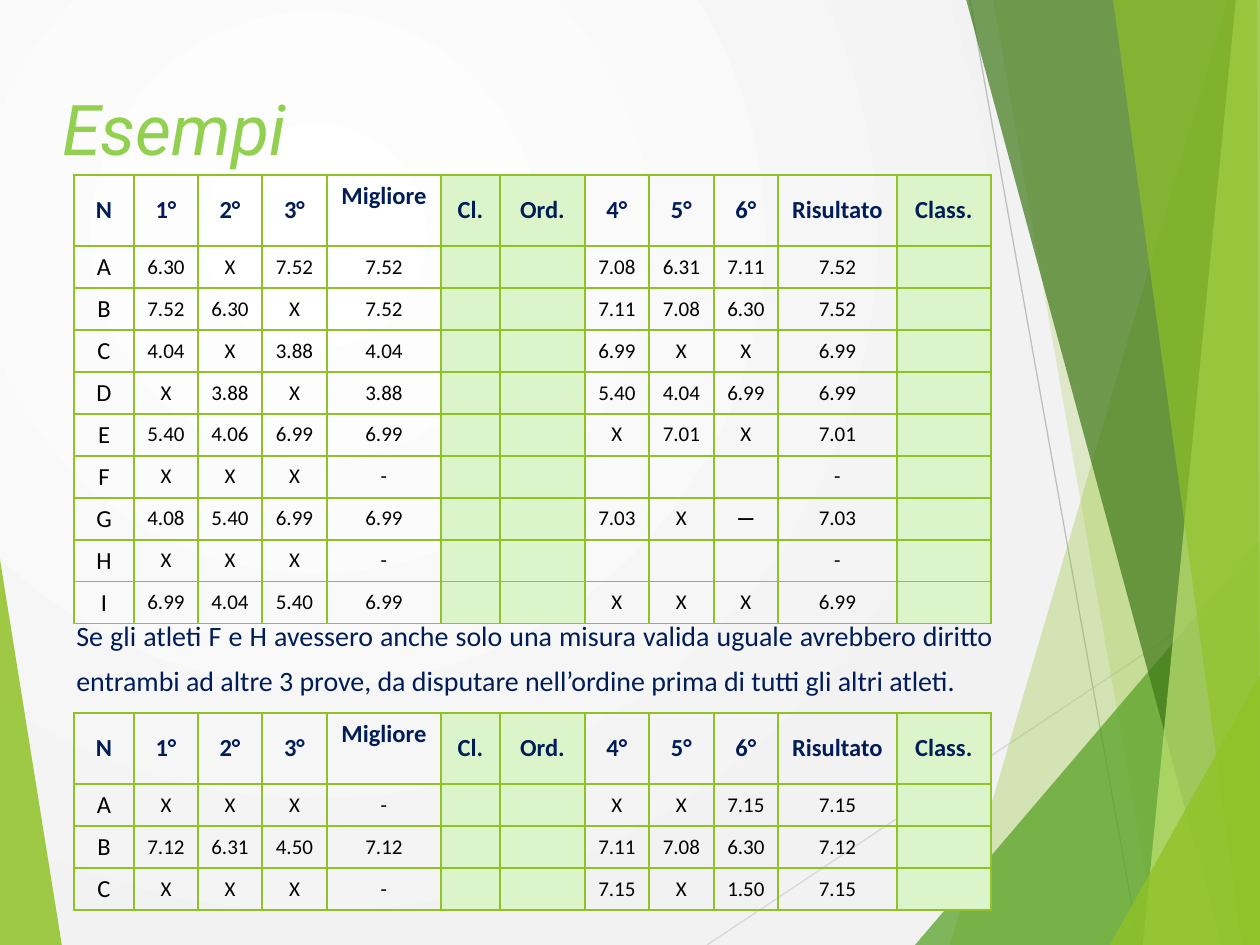
from lxml.etree import SubElement
from pptx import Presentation
from pptx.dml.color import RGBColor as Rgb
from pptx.enum.shapes import MSO_CONNECTOR as Conn
from pptx.enum.text import MSO_ANCHOR as Anchor, MSO_AUTO_SIZE as Auto, PP_ALIGN as Align
from pptx.oxml import parse_xml
from pptx.oxml.ns import nsdecls, qn
from pptx.util import Pt

SCALE = 914400 / 126
HUES = {
    "lime": "90C226", "leaf": "54A021", "moss": "3F7819", "pale": "C0E474",
    "title": "92D050", "navy": "001D58", "black": "000000", "mint": "DBF4CA",
    "silver": "D9D9D9", "gray": "BFBFBF", "white": "FFFFFF", "smoke": "F2F2F2",
}
FONT = "Calibri"

# Table grid
COLS = [60, 64, 64, 65, 114, 59, 85, 64, 65, 64, 119, 94]
TINTED = (5, 6, 11)
HEAD_H, ROW_H = 71, 42
HEAD = "N,1°,2°,3°,Migliore,Cl.,Ord.,4°,5°,6°,Risultato,Class."
FIRST = [
    "A,6.30,X,7.52,7.52,,,7.08,6.31,7.11,7.52,",
    "B,7.52,6.30,X,7.52,,,7.11,7.08,6.30,7.52,",
    "C,4.04,X,3.88,4.04,,,6.99,X,X,6.99,",
    "D,X,3.88,X,3.88,,,5.40,4.04,6.99,6.99,",
    "E,5.40,4.06,6.99,6.99,,,X,7.01,X,7.01,",
    "F,X,X,X,-,,,,,,-,",
    "G,4.08,5.40,6.99,6.99,,,7.03,X,—,7.03,",
    "H,X,X,X,-,,,,,,-,",
    "I,6.99,4.04,5.40,6.99,,,X,X,X,6.99,",
]
SECOND = [
    "A,X,X,X,-,,,X,X,7.15,7.15,",
    "B,7.12,6.31,4.50,7.12,,,7.11,7.08,6.30,7.12,",
    "C,X,X,X,-,,,7.15,X,1.50,7.15,",
]
NOTE = ("Se gli atleti F e H avessero anche solo una misura valida uguale "
        "avrebbero diritto entrambi ad altre 3 prove, da disputare "
        "nell’ordine prima di tutti gli altri atleti.")

# Background panes: colour, opacity in percent, corners
EDGE = [("lime", 85, [(-1, 553), (62, 946), (-1, 945)])]
RAYS = [("silver", (707, 945, 1261, 576)), ("gray", (970, 0, 1139, 945))]
PANES = [
    ("lime", 30, [(1228, 0), (950, 945), (1262, 945), (1261, 0)]),
    ("lime", 20, [(993, -1), (1158, 945), (1261, 945), (1261, -1)]),
    ("leaf", 72, [(915, 945), (1260, 541), (1261, 945)]),
    ("moss", 70, [(966, -1), (1222, 945), (1261, 945), (1261, -1)]),
    ("pale", 70, [(1236, -1), (1143, 945), (1261, 945), (1260, -1)]),
    ("lime", 65, [(1113, -1), (1242, 945), (1260, 945), (1257, -1)]),
    ("lime", 80, [(1110, 945), (1261, 674), (1261, 945)]),
]


def px(n):
    return round(n * SCALE)


def hue(name):
    return Rgb.from_string(HUES[name])


def style(para, size, color, font=FONT, bold=False, italic=False):
    face = para.font
    face.name, face.size, face.bold, face.italic = font, Pt(size), bold, italic
    face.color.rgb = hue(color)


def backdrop(slide):
    fill = slide.background.fill
    fill.gradient()
    for stop, name in zip(fill.gradient_stops, ("white", "smoke")):
        stop.color.rgb = hue(name)
    lin = next(slide.element.iter(qn("a:lin")))
    lin.getparent().replace(lin, parse_xml(
        f'<a:path {nsdecls("a")} path="circle"><a:fillToRect l="50000" '
        't="50000" r="100000" b="100000"/></a:path>'))


def panes(slide, items):
    for name, alpha, spots in items:
        pen = slide.shapes.build_freeform(*spots[0], scale=SCALE)
        pen.add_line_segments(spots[1:], close=True)
        pane = pen.convert_to_shape()
        pane.shadow.inherit = False
        pane.line.fill.background()
        pane.fill.solid()
        pane.fill.fore_color.rgb = hue(name)
        tint = next(pane.element.spPr.iter(qn("a:srgbClr")))
        SubElement(tint, qn("a:alpha"), val=str(alpha * 1000))


def rays(slide):
    for name, ends in RAYS:
        ray = slide.shapes.add_connector(Conn.STRAIGHT, *map(px, ends))
        ray.line.color.rgb = hue(name)
        ray.line.width = Pt(0.75)
        SubElement(ray.element.spPr, qn("a:effectLst"))


def heading(slide, x, y, w, h):
    title = slide.shapes.title
    title.left, title.top, title.width, title.height = map(px, (x, y, w, h))
    frame = title.text_frame
    frame.text = "Esempi"
    frame.auto_size = Auto.NONE
    frame.vertical_anchor = Anchor.TOP
    frame.margin_left, frame.margin_top, frame.margin_bottom = px(62), px(54), 0
    para = frame.paragraphs[0]
    para.alignment = Align.LEFT
    para.line_spacing = 1.0
    style(para, 40, "title", "Roboto", italic=True)


def border(cell):
    props = cell._tc.get_or_add_tcPr()
    for side in "LRTB":
        props.append(parse_xml(
            f'<a:ln{side} {nsdecls("a")} w="12700"><a:solidFill><a:srgbClr '
            f'val="{HUES["lime"]}"/></a:solidFill></a:ln{side}>'))


def fill_cell(cell, text, row, col):
    border(cell)
    if col in TINTED:
        cell.fill.solid()
        cell.fill.fore_color.rgb = hue("mint")
    else:
        cell.fill.background()
    cell.vertical_anchor = Anchor.TOP if text == "Migliore" else Anchor.MIDDLE
    cell.margin_top = cell.margin_bottom = px(6) if text else 0
    cell.margin_left = cell.margin_right = px(12)
    cell.text = text
    para = cell.text_frame.paragraphs[0]
    para.alignment = Align.CENTER
    if row == 0:
        style(para, 14, "navy", bold=True)
    else:
        style(para, 12 if col else 14, "black", bold=text == "—")


def results(slide, x, y, body):
    rows = [line.split(",") for line in [HEAD, *body]]
    high = HEAD_H + ROW_H * len(body)
    grid = slide.shapes.add_table(
        len(rows), len(COLS), px(x), px(y), px(sum(COLS)), px(high)).table
    grid.first_row = grid.horz_banding = False
    for col, wide in zip(grid.columns, COLS):
        col.width = px(wide)
    for r, row in enumerate(rows):
        grid.rows[r].height = px(ROW_H if r else HEAD_H)
        for c, text in enumerate(row):
            fill_cell(grid.cell(r, c), text, r, c)


def remark(slide, x, y, w, h):
    frame = slide.shapes.add_textbox(*map(px, (x, y, w, h))).text_frame
    frame.word_wrap = True
    frame.text = NOTE
    para = frame.paragraphs[0]
    para.alignment = Align.JUSTIFY
    para.line_spacing = 1.34
    style(para, 16, "navy")


def main():
    deck = Presentation()
    deck.slide_width, deck.slide_height = px(1260), px(945)
    slide = deck.slides.add_slide(deck.slide_layouts[5])
    # Decoration
    backdrop(slide)
    panes(slide, EDGE)
    rays(slide)
    panes(slide, PANES)
    # Content
    heading(slide, 0, 31, 992, 124)
    results(slide, 74, 175, FIRST)
    results(slide, 74, 713, SECOND)
    remark(slide, 64, 601, 942, 118)
    deck.save("out.pptx")


if __name__ == "__main__":
    main()
